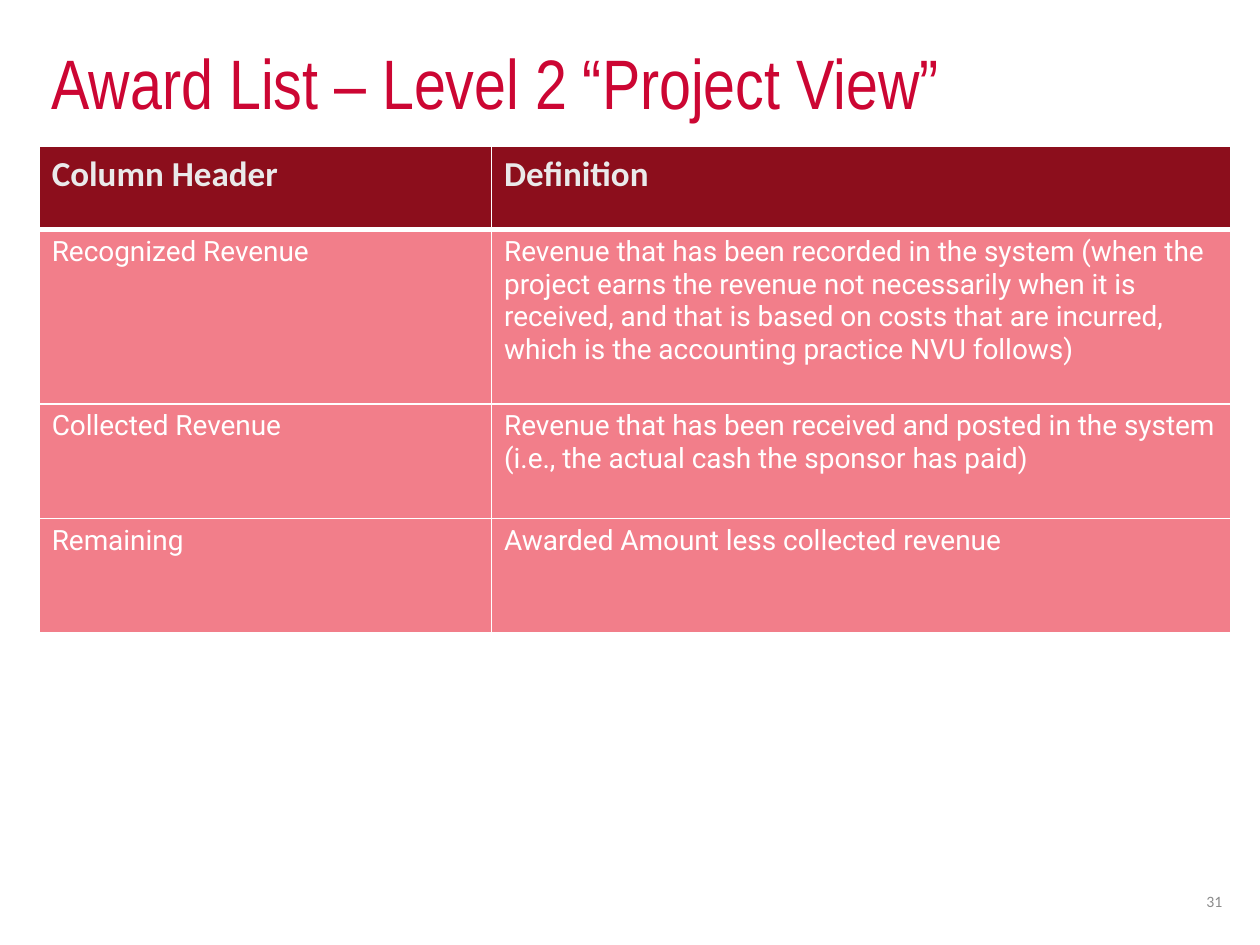
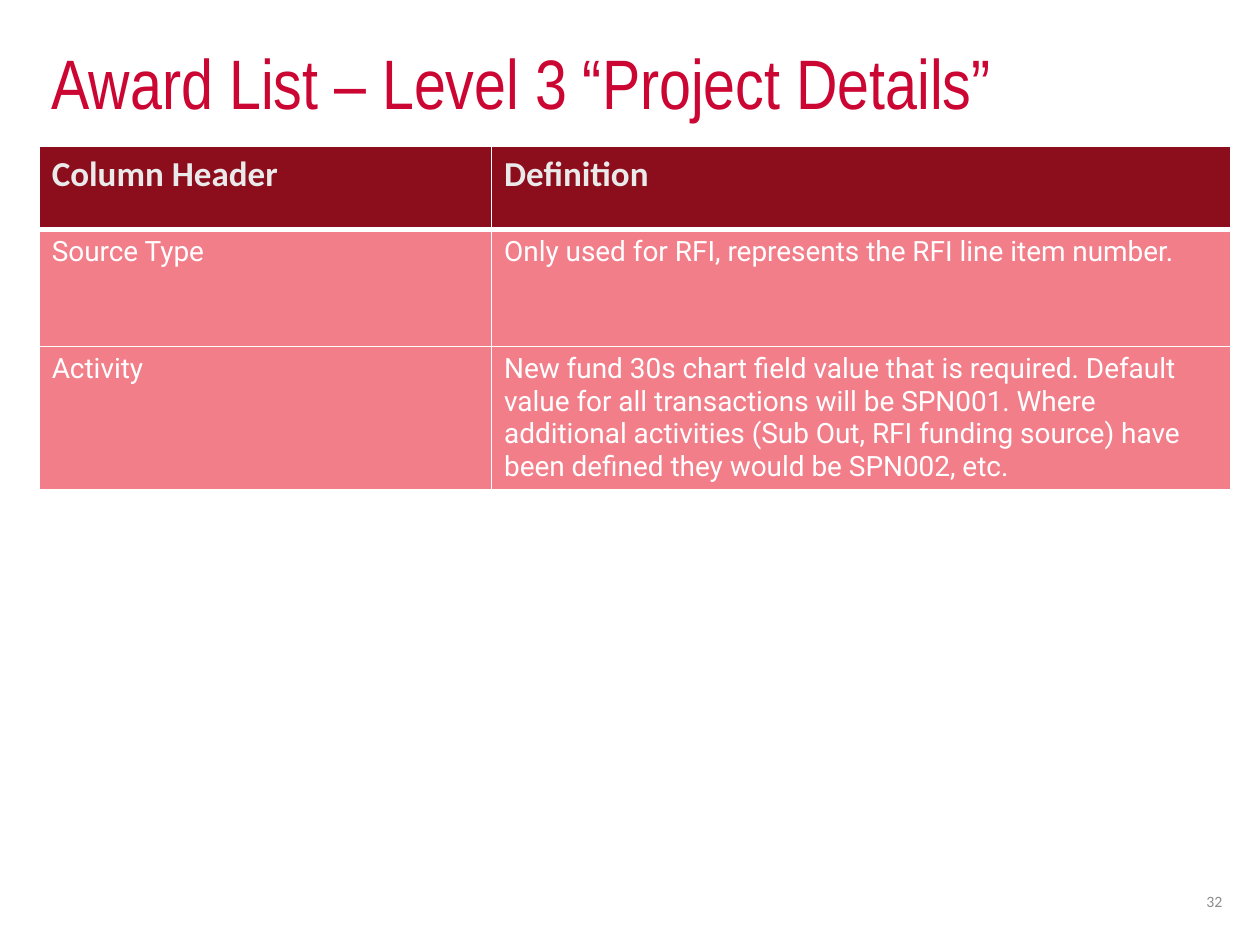
from dataclasses import dataclass

from lxml.etree import SubElement
from pptx import Presentation
from pptx.dml.color import RGBColor
from pptx.enum.text import MSO_ANCHOR, MSO_AUTO_SIZE, PP_ALIGN
from pptx.oxml.ns import qn
from pptx.util import Cm, Pt


@dataclass(frozen=True)
class TextStyle:
    """Describe the look of one kind of text."""

    name: str
    size: int
    colour: str
    bold: bool = False


@dataclass(frozen=True)
class Theme:
    """Hold the colours and text styles of the deck."""

    title = TextStyle("Arial Narrow", 40, "CC0633")
    header = TextStyle("Calibri", 20, "EAEAEA", True)
    body = TextStyle("Roboto", 16, "FFFFFF")
    number = TextStyle("Calibri", 9, "8C8C8C")
    header_fill = "8C0E1C"
    body_fill = "F27E8A"
    rule = "FFFFFF"
    thin = 1
    thick = 3


@dataclass(frozen=True)
class Box:
    """Give a place on the page in centimetres."""

    left: float
    top: float
    width: float
    height: float

    def lengths(self):
        """Return left, top, width and height as lengths."""
        return Cm(self.left), Cm(self.top), Cm(self.width), Cm(self.height)


THEME = Theme()
TITLE_BOX = Box(0.79, 0.91, 21.89, 1.68)
NUMBER_BOX = Box(24, 17.65, 0.89, 1.02)
TABLE_LEFT, TABLE_TOP = 0.79, 2.95
COLUMN_WIDTHS = (9.12, 14.91)
HEADER_HEIGHT = 1.68
HEADINGS = ("Column Header", "Definition")
FIRST_NUMBER = 31

PAGES = [
    ("Award List – Level 2 “Project View”", [
        (3.51, "Recognized Revenue",
         "Revenue that has been recorded in the system (when the project earns "
         "the revenue not necessarily when it is received, and that is based on "
         "costs that are incurred, which is the accounting practice NVU follows)"),
        (2.31, "Collected Revenue",
         "Revenue that has been received and posted in the system "
         "(i.e., the actual cash the sponsor has paid)"),
        (2.31, "Remaining", "Awarded Amount less collected revenue"),
    ]),
    ("Award List – Level 3 “Project Details”", [
        (2.36, "Source Type",
         "Only used for RFI, represents the RFI line item number."),
        (2.82, "Activity",
         "New fund 30s chart field value that is required. Default value for all "
         "transactions will be SPN001. Where additional activities (Sub Out, RFI "
         "funding source) have been defined they would be SPN002, etc."),
    ]),
]


def write(frame, text, style):
    """Put one styled paragraph in a text frame and return it."""
    frame.text = text
    frame.word_wrap = True
    para = frame.paragraphs[0]
    para.font.name = style.name
    para.font.size = Pt(style.size)
    para.font.bold = style.bold
    para.font.color.rgb = RGBColor.from_string(style.colour)
    return para


def add_title(page, box, text):
    """Place the title placeholder in its box."""
    title = page.shapes.title
    title.left, title.top, title.width, title.height = box.lengths()
    frame = title.text_frame
    para = write(frame, text, THEME.title)
    para.alignment = PP_ALIGN.LEFT
    para.line_spacing = 0.9
    frame.auto_size = MSO_AUTO_SIZE.NONE
    frame.vertical_anchor = MSO_ANCHOR.MIDDLE


def add_number(page, box, number):
    """Place the page number in its box."""
    frame = page.shapes.add_textbox(*box.lengths()).text_frame
    write(frame, str(number), THEME.number).alignment = PP_ALIGN.RIGHT
    frame.vertical_anchor = MSO_ANCHOR.MIDDLE


def rule_cell(cell, top, bottom):
    """Draw the four borders of a cell."""
    properties = cell._tc.get_or_add_tcPr()
    widths = {"lnL": THEME.thin, "lnR": THEME.thin, "lnT": top, "lnB": bottom}
    for side, width in widths.items():
        line = SubElement(properties, qn(f"a:{side}"), w=str(Pt(width)))
        fill = SubElement(line, qn("a:solidFill"))
        SubElement(fill, qn("a:srgbClr"), val=THEME.rule)


def add_definitions(page, left, top, entries):
    """Build the table of column headers and their definitions."""
    rows = [(HEADER_HEIGHT, *HEADINGS), *entries]
    box = Box(left, top, sum(COLUMN_WIDTHS), sum(row[0] for row in rows))
    table = page.shapes.add_table(
        len(rows), len(COLUMN_WIDTHS), *box.lengths()).table
    for column, width in zip(table.columns, COLUMN_WIDTHS):
        column.width = Cm(width)
    for index, (height, *texts) in enumerate(rows):
        table.rows[index].height = Cm(height)
        style = THEME.body if index else THEME.header
        colour = THEME.body_fill if index else THEME.header_fill
        above = THEME.thick if index == 1 else THEME.thin
        below = THEME.thin if index else THEME.thick
        for cell, text in zip(table.rows[index].cells, texts):
            write(cell.text_frame, text, style)
            rule_cell(cell, above, below)
            cell.fill.solid()
            cell.fill.fore_color.rgb = RGBColor.from_string(colour)


def add_definition_page(deck, number, title, entries):
    """Add one page with a title, a table and a number."""
    page = deck.slides.add_slide(deck.slide_layouts.get_by_name("Title Only"))
    add_definitions(page, TABLE_LEFT, TABLE_TOP, entries)
    add_title(page, TITLE_BOX, title)
    add_number(page, NUMBER_BOX, number)


def main():
    """Build the deck and save it."""
    deck = Presentation()
    deck.slide_width, deck.slide_height = Cm(25.4), Cm(19.05)
    for number, (title, entries) in enumerate(PAGES, FIRST_NUMBER):
        add_definition_page(deck, number, title, entries)
    deck.save("out.pptx")


if __name__ == "__main__":
    main()
